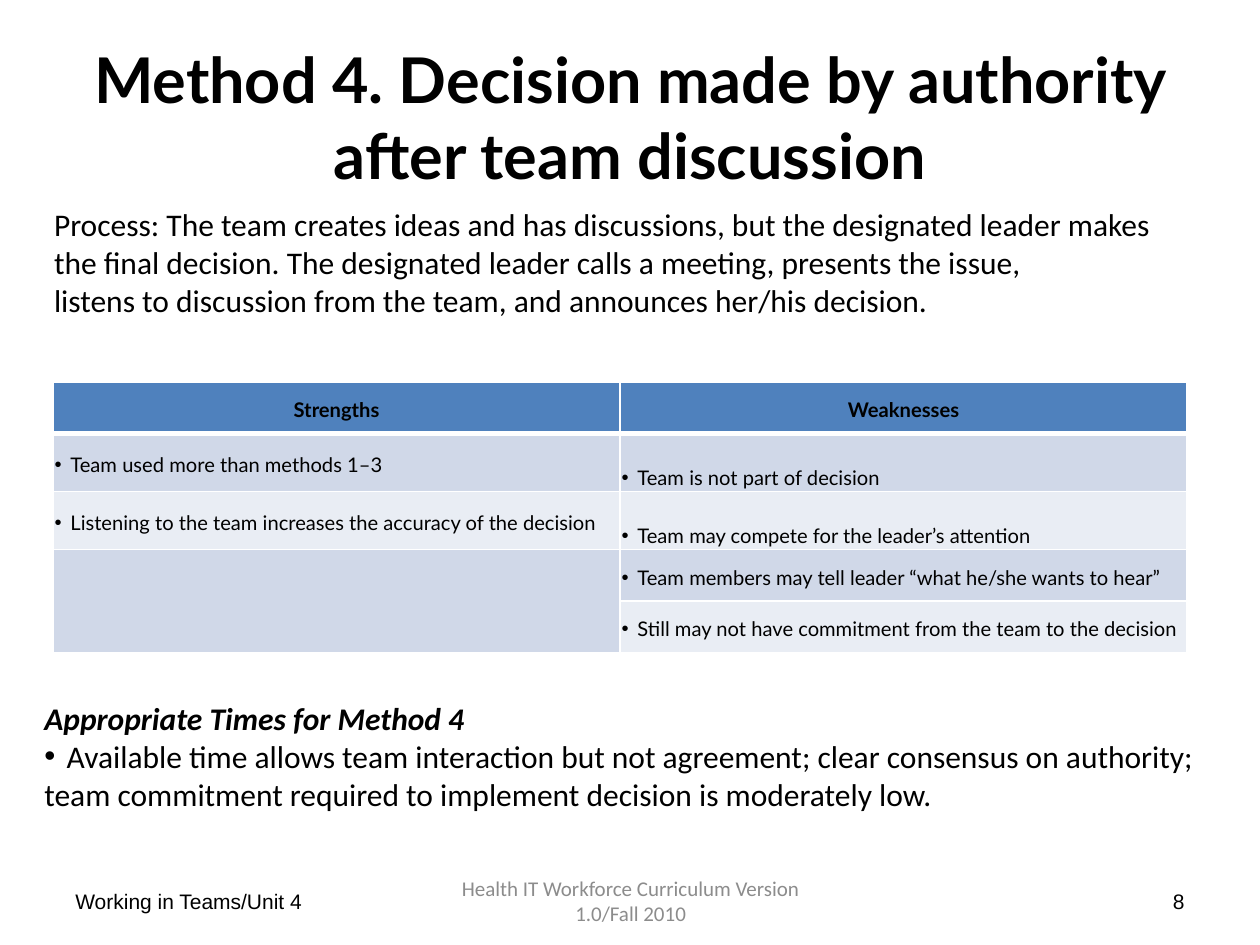
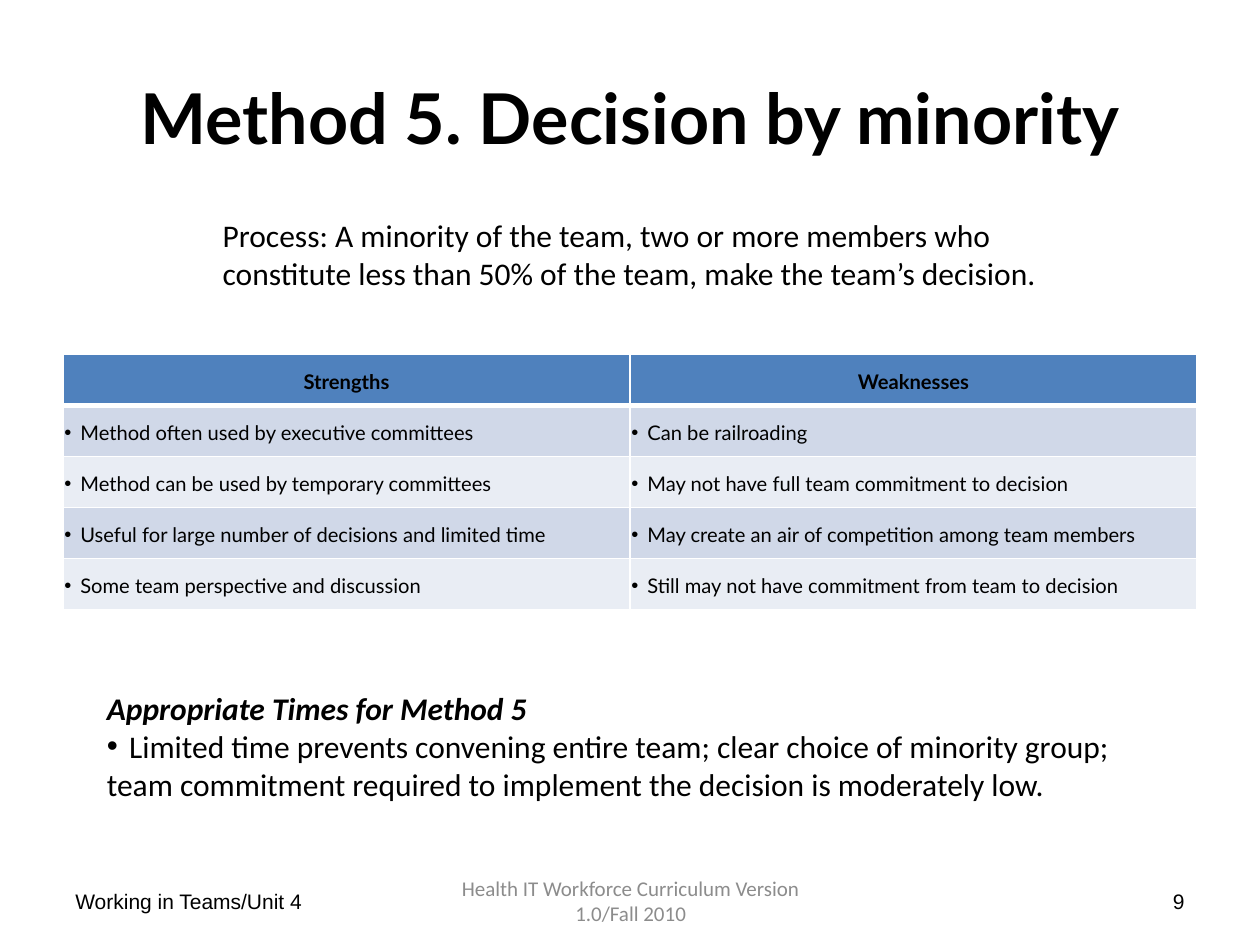
from dataclasses import dataclass

from pptx import Presentation
from pptx.dml.color import RGBColor as Rgb
from pptx.enum.text import MSO_ANCHOR as Anchor, MSO_AUTO_SIZE as AutoSize, PP_ALIGN as Align
from pptx.oxml.ns import qn
from pptx.util import Cm, Pt
from lxml.etree import SubElement


@dataclass(frozen=True)
class Theme:
    black: str = "000000"
    white: str = "FFFFFF"
    grey: str = "8C8C8C"
    header: str = "4F81BD"
    bands: tuple = ("D0D8E8", "E9EDF4")
    display: str = "Lato"
    text: str = "Calibri"
    footer: str = "Arial"
    body_size: float = 18
    table_size: float = 11.5
    footer_size: float = 12
    body_hang: float = 0.45
    table_hang: float = 0.32
    thin: float = 1
    thick: float = 3


THEME = Theme()
FOOTER_TOP, FOOTER_HEIGHT = 17.65, 1.02
TABLE_WIDTH = 22.86


def assign(target, values):
    for name, value in values.items():
        setattr(target, name, value)


class Deck:
    def __init__(self, theme):
        self.theme = theme
        self.prs = Presentation()
        assign(self.prs, {"slide_width": Cm(25.4), "slide_height": Cm(19.05)})
        self.slide = None

    def new_slide(self):
        self.slide = self.prs.slides.add_slide(self.prs.slide_layouts[1])

    def place(self, holder, box, anchor=Anchor.TOP):
        assign(holder, dict(zip(("left", "top", "width", "height"), map(Cm, box))))
        assign(holder.text_frame, {
            "word_wrap": True, "auto_size": AutoSize.NONE, "vertical_anchor": anchor})
        return holder.text_frame

    def style(self, paragraph, size, face, color=None, bold=False, italic=False, **spacing):
        assign(paragraph, spacing)
        assign(paragraph.font, {"size": Pt(size), "name": face, "bold": bold, "italic": italic})
        paragraph.font.color.rgb = Rgb.from_string(color or self.theme.black)

    def bullet(self, paragraph, hang=0):
        props = paragraph._p.get_or_add_pPr()
        props.set("marL", str(Cm(hang)))
        props.set("indent", str(-Cm(hang)))
        if hang:
            SubElement(props, qn("a:buFont"), typeface="Arial")
            SubElement(props, qn("a:buChar"), char="•")
        else:
            SubElement(props, qn("a:buNone"))

    def title(self, wording, size):
        frame = self.place(self.slide.shapes.title, (1.27, 0.76, 22.86, 3.18), Anchor.MIDDLE)
        frame.text = wording
        self.style(frame.paragraphs[0], size, self.theme.display, bold=True,
                   alignment=Align.CENTER)

    def process(self, box, lines):
        frame = self.place(self.slide.shapes.add_textbox(0, 0, 0, 0), box)
        frame.text = "\n".join(lines)
        for paragraph in frame.paragraphs:
            self.style(paragraph, self.theme.body_size, self.theme.text)

    def appropriate_times(self, box, heading, advice, continuation):
        frame = self.place(self.slide.placeholders[1], box)
        frame.text = "\n".join((heading, advice, continuation))
        for index, paragraph in enumerate(frame.paragraphs):
            is_heading = index == 0
            self.bullet(paragraph, self.theme.body_hang if index == 1 else 0)
            self.style(paragraph, self.theme.body_size, self.theme.text, bold=is_heading,
                       italic=is_heading, alignment=Align.LEFT, space_before=Pt(0))

    def borders(self, cell, row):
        theme = self.theme
        heavy = {0: "lnB", 1: "lnT"}.get(row)
        for side in ("lnL", "lnR", "lnT", "lnB"):
            width = theme.thick if side == heavy else theme.thin
            line = SubElement(cell._tc.get_or_add_tcPr(), qn(f"a:{side}"), w=str(Pt(width)))
            SubElement(SubElement(line, qn("a:solidFill")), qn("a:srgbClr"), val=theme.white)

    def cell(self, cell, row, wording, lowered):
        theme = self.theme
        is_header = row == 0
        self.borders(cell, row)
        cell.fill.solid()
        fill = theme.header if is_header else theme.bands[(row - 1) % 2]
        cell.fill.fore_color.rgb = Rgb.from_string(fill)
        sides = ("margin_left", "margin_right", "margin_top", "margin_bottom")
        assign(cell, dict.fromkeys(sides, Cm(0.03)))
        assign(cell, {"vertical_anchor": Anchor.MIDDLE, "text": wording})
        if lowered:
            cell.margin_top = Cm(0.57)
        paragraph = cell.text_frame.paragraphs[0]
        if wording and not is_header:
            self.bullet(paragraph, theme.table_hang)
        self.style(paragraph, theme.table_size, theme.display, bold=is_header,
                   alignment=Align.CENTER if is_header else Align.LEFT,
                   line_spacing=1.15, space_after=Pt(10))

    def comparison(self, left, top, strengths, weaknesses, row_height, tall_rows=(),
                   tall_height=1.17):
        count = len(weaknesses) + 1
        heights = [tall_height if row in tall_rows else row_height for row in range(count)]
        table = self.slide.shapes.add_table(
            count, 2, Cm(left), Cm(top), Cm(TABLE_WIDTH), Cm(sum(heights))).table
        for row, height in enumerate(heights):
            table.rows[row].height = Cm(height)
        for col, points in enumerate((["Strengths"] + strengths, ["Weaknesses"] + weaknesses)):
            padded = points + [""] * (count - len(points))
            for row, wording in enumerate(padded):
                self.cell(table.cell(row, col), row, wording, col == 1 and row in tall_rows)
        if len(strengths) < len(weaknesses):
            table.cell(len(strengths) + 1, 0).merge(table.cell(count - 1, 0))

    def footer_part(self, left, width, wording, align, face, color):
        box = (left, FOOTER_TOP, width, FOOTER_HEIGHT)
        frame = self.place(self.slide.shapes.add_textbox(0, 0, 0, 0), box, Anchor.MIDDLE)
        frame.text = wording
        self.style(frame.paragraphs[0], self.theme.footer_size, face, color, alignment=align)

    def footer(self, number):
        theme = self.theme
        for part in (
            (1.27, 5.92, "Working in Teams/Unit 4", Align.LEFT, theme.footer, theme.black),
            (18.21, 5.92, str(number), Align.RIGHT, theme.footer, theme.black),
            (8.69, 8.05, "Health IT Workforce Curriculum Version 1.0/Fall 2010",
             Align.CENTER, theme.text, theme.grey),
        ):
            self.footer_part(*part)


METHODS = [
    {
        "number": 8,
        "title": ("Method 4. Decision made by authority after team discussion", 36),
        "comparison": {
            "left": 1.07, "top": 7.7, "row_height": 1.04, "tall_rows": (1, 2),
            "strengths": [
                "Team used more than methods 1–3",
                "Listening to the team increases the accuracy of the decision",
            ],
            "weaknesses": [
                "Team is not part of decision",
                "Team may compete for the leader’s attention",
                "Team members may tell leader “what he/she wants to hear”",
                "Still may not have commitment from the team to the decision",
            ],
        },
        "process": ((0.84, 4.01, 23.04, 2.57), (
            "Process: The team creates ideas and has discussions, but the designated leader makes",
            "the final decision. The designated leader calls a meeting, presents the issue,",
            "listens to discussion from the team, and announces her/his decision.",
        )),
        "times": (
            (0.64, 13.97, 24.13, 3.33),
            "Appropriate Times for Method 4",
            "Available time allows team interaction but not agreement; clear consensus on authority;",
            "team commitment required to implement decision is moderately low.",
        ),
    },
    {
        "number": 9,
        "title": ("Method 5. Decision by minority", 40),
        "comparison": {
            "left": 1.27, "top": 7.14, "row_height": 1.03,
            "strengths": [
                "Method often used by executive committees",
                "Method can be used by temporary committees",
                "Useful for large number of decisions and limited time",
                "Some team perspective and discussion",
            ],
            "weaknesses": [
                "Can be railroading",
                "May not have full team commitment to decision",
                "May create an air of competition among team members",
                "Still may not have commitment from team to decision",
            ],
        },
        "process": ((4.24, 4.24, 17.09, 1.8), (
            "Process: A minority of the team, two or more members who",
            "constitute less than 50% of the team, make the team’s decision.",
        )),
        "times": (
            (1.9, 13.77, 21.13, 2.57),
            "Appropriate Times for Method 5",
            "Limited time prevents convening entire team; clear choice of minority group;",
            "team commitment required to implement the decision is moderately low.",
        ),
    },
]


def main():
    deck = Deck(THEME)
    for method in METHODS:
        deck.new_slide()
        deck.title(*method["title"])
        deck.comparison(**method["comparison"])
        deck.process(*method["process"])
        deck.appropriate_times(*method["times"])
        deck.footer(method["number"])
    deck.prs.save("out.pptx")


if __name__ == "__main__":
    main()
